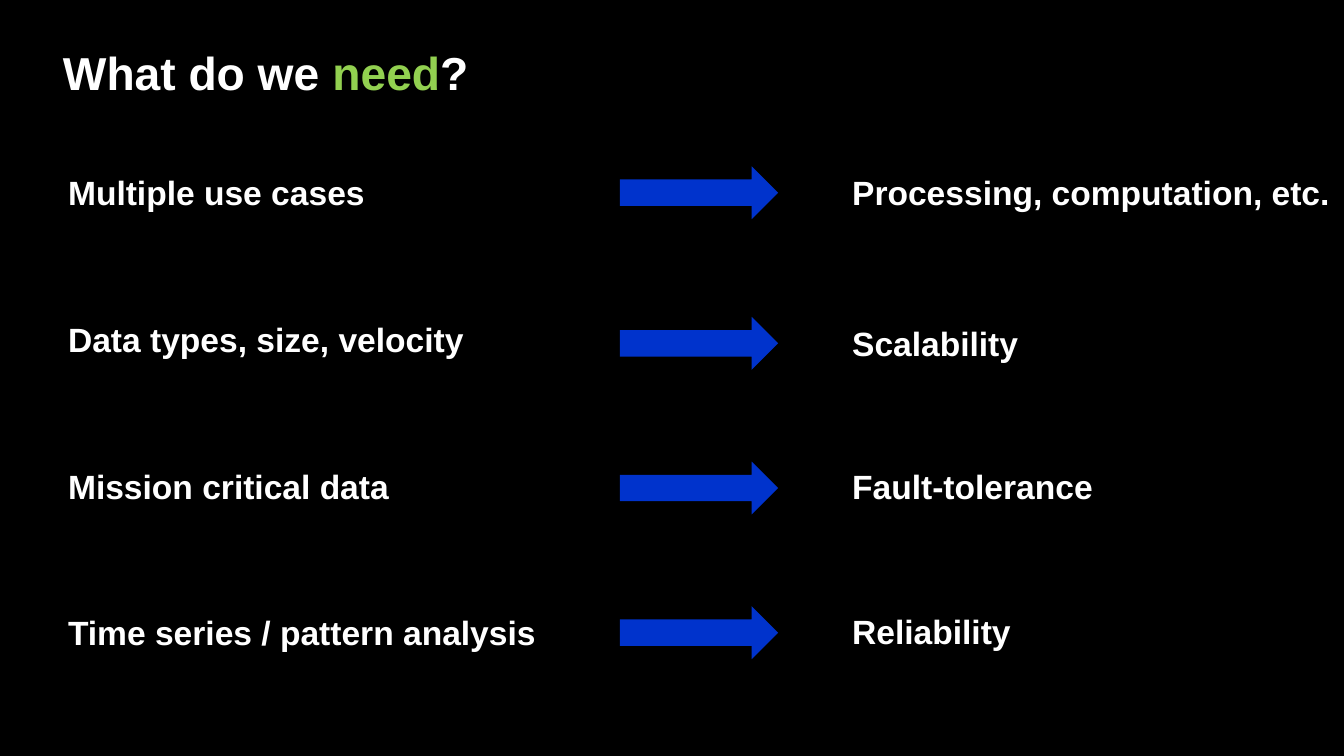
"""Build a slide that matches four data needs with the qualities they call for."""
from dataclasses import dataclass

from pptx import Presentation
from pptx.dml.color import RGBColor
from pptx.enum.shapes import MSO_SHAPE as Preset
from pptx.enum.text import MSO_ANCHOR as Anchor, MSO_AUTO_SIZE as AutoSize, PP_ALIGN as Align
from pptx.slide import Slide
from pptx.util import Cm, Pt

COLORS = {"background": "000000", "text": "FFFFFF", "accent": "92D050", "arrow": "0033CC"}
NEED_LEFT, ARROW_LEFT, QUALITY_LEFT = 2.82, 31.24, 42.34
FIRST_TOP, ROW_PITCH, ROW_HEIGHT = 8.38, 7.39, 2.67
ARROW_WIDTH = 7.98


@dataclass(frozen=True)
class Match:
    need: str
    need_width: float
    quality: str
    quality_width: float
    arrow_drop: float = 0
    quality_drop: float = 0


MATCHES = [
    Match("Multiple use cases", 23.67, "Processing, computation, etc.", 27.1),
    Match("Data types, size, velocity", 23.22, "Scalability", 22.17, 0.2, 0.2),
    Match("Mission critical data", 20.5, "Fault-tolerance", 13.49, 0.1),
    Match("Time series / pattern analysis", 25.04, "Reliability", 24.49, 0, -0.05),
]


def color(name: str) -> RGBColor:
    return RGBColor.from_string(COLORS[name])


def style_run(run, size: float, color_name: str) -> None:
    run.font.name = "Arial"
    run.font.size = Pt(size)
    run.font.bold = True
    run.font.color.rgb = color(color_name)


def add_title(slide: Slide) -> None:
    title = slide.shapes.title
    title.left, title.top, title.width, title.height = Cm(2.92), Cm(2.11), Cm(25.65), Cm(3.07)
    frame = title.text_frame
    frame.vertical_anchor = Anchor.TOP
    frame.auto_size = AutoSize.NONE
    paragraph = frame.paragraphs[0]
    paragraph.alignment = Align.LEFT
    for words, color_name in (("What do we ", "text"), ("need", "accent"), ("?", "text")):
        run = paragraph.add_run()
        run.text = words
        style_run(run, 66, color_name)


def add_label(slide: Slide, words: str, left: float, top: float, width: float) -> None:
    label = slide.shapes.add_textbox(Cm(left), Cm(top), Cm(width), Cm(ROW_HEIGHT))
    frame = label.text_frame
    frame.text = words
    frame.word_wrap = True
    frame.auto_size = AutoSize.SHAPE_TO_FIT_TEXT
    frame.margin_left = frame.margin_right = Cm(0.61)
    frame.margin_top = frame.margin_bottom = Cm(0.3)
    style_run(frame.paragraphs[0].runs[0], 48, "text")


def add_arrow(slide: Slide, top: float) -> None:
    arrow = slide.shapes.add_shape(
        Preset.RIGHT_ARROW, Cm(ARROW_LEFT), Cm(top), Cm(ARROW_WIDTH), Cm(ROW_HEIGHT)
    )
    arrow.shadow.inherit = False
    arrow.fill.solid()
    arrow.fill.fore_color.rgb = color("arrow")
    arrow.line.fill.background()


def add_match(slide: Slide, match: Match, top: float) -> None:
    add_label(slide, match.need, NEED_LEFT, top, match.need_width)
    add_arrow(slide, top + match.arrow_drop)
    add_label(slide, match.quality, QUALITY_LEFT, top + match.quality_drop, match.quality_width)


def main() -> None:
    deck = Presentation()
    deck.slide_width, deck.slide_height = Cm(67.74), Cm(38.1)
    slide = deck.slides.add_slide(deck.slide_layouts[5])
    slide.background.fill.solid()
    slide.background.fill.fore_color.rgb = color("background")
    add_title(slide)
    for row, match in enumerate(MATCHES):
        add_match(slide, match, FIRST_TOP + row * ROW_PITCH)
    deck.save("out.pptx")


if __name__ == "__main__":
    main()
